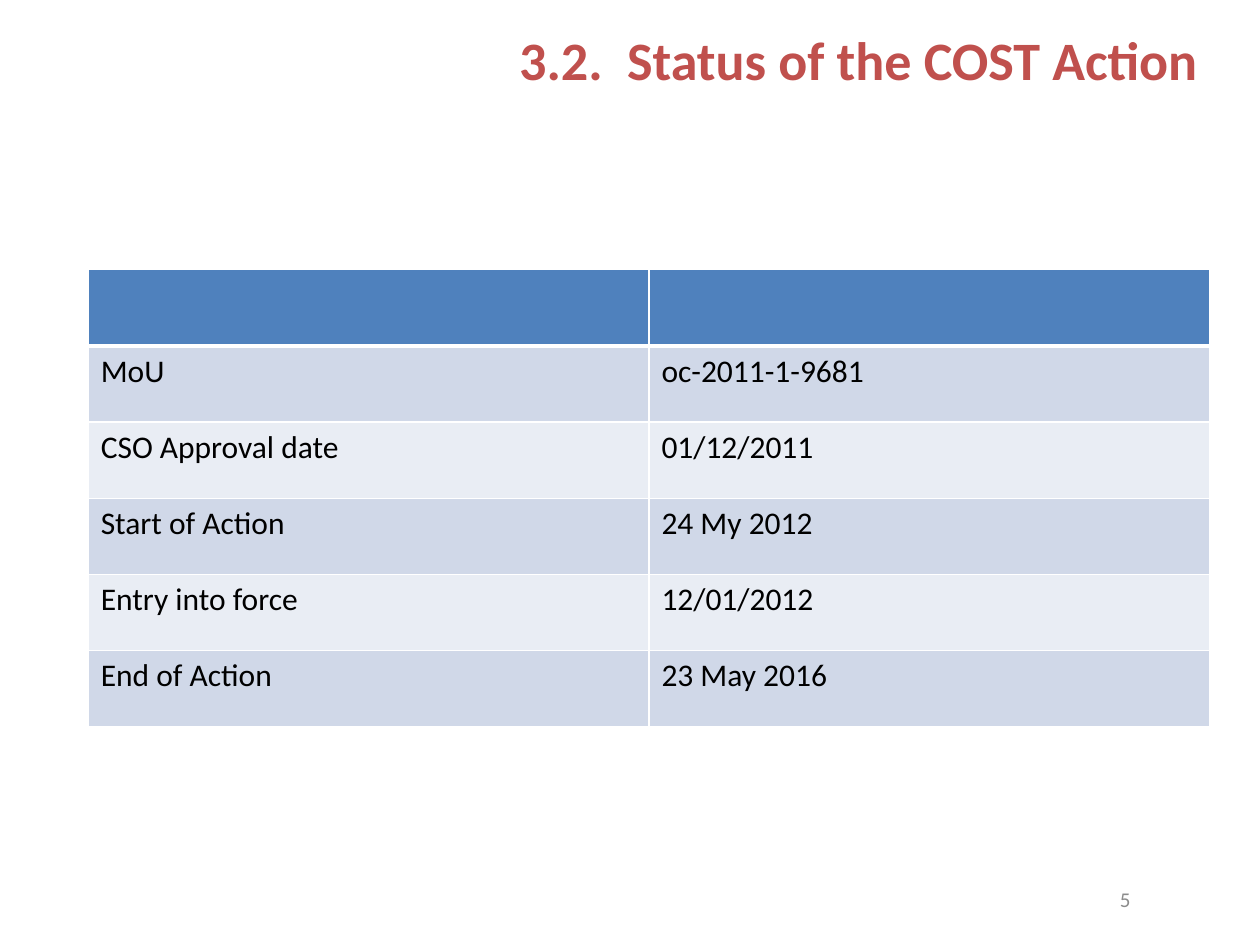
from typing import NamedTuple

from lxml import etree
from pptx import Presentation
from pptx.dml.color import RGBColor
from pptx.enum import text
from pptx.oxml import ns
from pptx.util import Inches, Pt

COLORS = {
    "title": "C0504D",
    "number": "8C8C8C",
    "text": "000000",
    "header": "4F81BD",
    "odd": "D0D8E8",
    "even": "E9EDF4",
    "border": "FFFFFF",
}
FONT = "Calibri"


class Label(NamedTuple):
    content: str
    left: float
    top: float
    width: float
    height: float
    size: float
    color: str
    bold: bool
    anchor: text.MSO_ANCHOR


class Milestone(NamedTuple):
    name: str
    value: str


LABELS = [
    Label("3.2.  Status of the COST Action", 0.66, 0.16, 8.94, 0.98, 30.9, "title", True, text.MSO_ANCHOR.TOP),
    Label("5", 8.45, 6.94, 0.62, 0.4, 12, "number", False, text.MSO_ANCHOR.MIDDLE),
]
MILESTONES = [
    Milestone("", ""),
    Milestone("MoU", "oc-2011-1-9681"),
    Milestone("CSO Approval date", "01/12/2011"),
    Milestone("Start of Action", "24 My 2012"),
    Milestone("Entry into force", "12/01/2012"),
    Milestone("End of Action", "23 May 2016"),
]


def set_font(p, size: float, color: str, bold: bool = False) -> None:
    p.font.name = FONT
    p.font.size = Pt(size)
    p.font.bold = bold
    p.font.color.rgb = RGBColor.from_string(COLORS[color])


def add_label(s, label: Label) -> None:
    sp = s.shapes.add_textbox(
        Inches(label.left), Inches(label.top), Inches(label.width), Inches(label.height)
    )
    tf = sp.text_frame
    tf.word_wrap = True
    tf.vertical_anchor = label.anchor
    p = tf.paragraphs[0]
    p.text = label.content
    p.alignment = text.PP_ALIGN.RIGHT
    set_font(p, label.size, label.color, label.bold)


def set_border(cell, side: str, width: float) -> None:
    props = cell._tc.get_or_add_tcPr()
    line = etree.SubElement(props, ns.qn(f"a:ln{side}"), w=str(Pt(width)))
    fill = etree.SubElement(line, ns.qn("a:solidFill"))
    etree.SubElement(fill, ns.qn("a:srgbClr"), val=COLORS["border"])


def add_milestones(s, rows: list[Milestone]) -> None:
    table = s.shapes.add_table(
        len(rows), 2, Inches(0.7), Inches(2.14), Inches(8.9), Inches(3.63)
    ).table
    for i, row in enumerate(rows):
        shade = "header" if i == 0 else "odd" if i % 2 else "even"
        widths = {"L": 1, "R": 1, "T": 3 if i == 1 else 1, "B": 3 if i == 0 else 1}
        for j, content in enumerate(row):
            cell = table.cell(i, j)
            for side, width in widths.items():
                set_border(cell, side, width)
            cell.fill.solid()
            cell.fill.fore_color.rgb = RGBColor.from_string(COLORS[shade])
            p = cell.text_frame.paragraphs[0]
            p.text = content
            set_font(p, 18, "text")


def main() -> None:
    prs = Presentation()
    prs.slide_width, prs.slide_height = Inches(10), Inches(7.5)
    s = prs.slides.add_slide(prs.slide_layouts[6])
    for label in LABELS:
        add_label(s, label)
    add_milestones(s, MILESTONES)
    prs.save("out.pptx")


if __name__ == "__main__":
    main()
